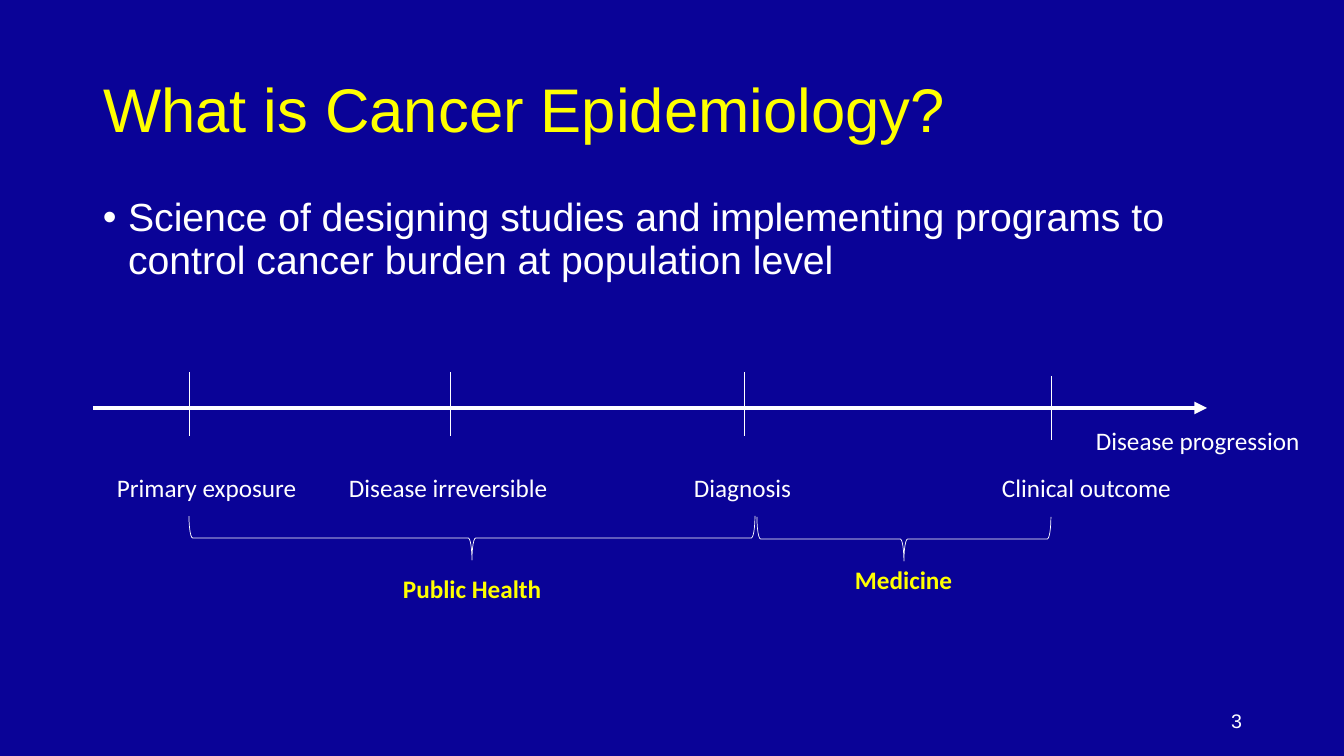
from lxml import etree
from pptx import Presentation
from pptx.dml.color import RGBColor
from pptx.enum.shapes import MSO_CONNECTOR, MSO_SHAPE
from pptx.enum.text import MSO_ANCHOR, MSO_AUTO_SIZE, PP_ALIGN
from pptx.oxml.ns import qn
from pptx.util import Pt

WIDTH, HEIGHT = 1344, 756
EMU_PER_PX = 12192000 / WIDTH
NAVY, YELLOW, WHITE = "0A0397", "FFFF00", "FFFFFF"

STAGES = [  # label, label left, label width, tick x, tick top
    ("Primary exposure", 107, 202, 189, 372),
    ("Disease irreversible", 339, 221, 450, 372),
    ("Diagnosis", 684, 119, 744, 372),
    ("Clinical outcome", 992, 192, 1051, 376),
]
FIELDS = [  # label, label left, top and width, brace left, top and width
    ("Public Health", 393, 568, 160, 189, 516, 566),
    ("Medicine", 845, 559, 118, 757, 517, 294),
]


def px(n):
    return round(n * EMU_PER_PX)


def color(value):
    return RGBColor.from_string(value)


def write(shape, text, size=18, font="Calibri", fill=WHITE, bold=False,
          align=PP_ALIGN.LEFT, anchor=MSO_ANCHOR.TOP, wrap=True, spacing=None):
    tf = shape.text_frame
    tf.word_wrap = wrap
    tf.auto_size = MSO_AUTO_SIZE.NONE if wrap else MSO_AUTO_SIZE.SHAPE_TO_FIT_TEXT
    tf.vertical_anchor = anchor
    p = tf.paragraphs[0]
    p.alignment = align
    p.line_spacing = spacing
    r = p.add_run()
    r.text = text
    r.font.size, r.font.name, r.font.bold = Pt(size), font, bold
    r.font.color.rgb = color(fill)
    return p


def add_text(s, box, text, **fmt):
    return write(s.shapes.add_textbox(*map(px, box)), text, **fmt)


def add_label(s, left, top, width, text, **fmt):
    add_text(s, (left, top, width, 40), text, wrap=False, **fmt)


def add_line(s, x1, y1, x2, y2, weight, arrow=False):
    line = s.shapes.add_connector(MSO_CONNECTOR.STRAIGHT, *map(px, (x1, y1, x2, y2)))
    line.line.color.rgb = color(WHITE)
    line.line.width = Pt(weight)
    if arrow:
        etree.SubElement(line.line._get_or_add_ln(), qn("a:tailEnd"), type="triangle")
    etree.SubElement(line._element.spPr, qn("a:effectLst"))


def add_brace(s, left, top, width, height):
    """Brace that fills the given box and points down."""
    x, y = left + (width - height) / 2, top + (height - width) / 2
    sp = s.shapes.add_shape(MSO_SHAPE.LEFT_BRACE, px(x), px(y), px(height), px(width))
    sp.rotation = 270
    sp.shadow.inherit = False
    sp.fill.background()
    sp.line.color.rgb = color(WHITE)
    sp.line.width = Pt(0.5)


def add_title(s, box, text):
    title = s.shapes.title
    title.left, title.top, title.width, title.height = map(px, box)
    write(title, text, size=44, font="Arial", fill=YELLOW,
          anchor=MSO_ANCHOR.MIDDLE, spacing=0.9)


def add_definition(s, box, text):
    p = add_text(s, box, text, size=28, font="Arial", spacing=0.9)
    p.space_before = Pt(10)
    pPr = p._p.get_or_add_pPr()
    pPr.set("marL", str(Pt(18)))
    pPr.set("indent", str(-Pt(18)))
    etree.SubElement(pPr, qn("a:buFont"), typeface="Arial")
    etree.SubElement(pPr, qn("a:buChar"), char="•")


def add_timeline(s, left, axis_y, width):
    add_line(s, left, axis_y, left + width, axis_y, 3, arrow=True)
    for text, label_left, label_width, tick_x, tick_top in STAGES:
        add_line(s, tick_x, tick_top, tick_x, tick_top + 64, 0.5)
        add_label(s, label_left, axis_y + 59, label_width, text)
    add_label(s, left + 993, axis_y + 12, 226, "Disease progression")


def add_fields():
    for text, left, top, width, *brace in FIELDS:
        yield (left, top, width, text), brace


def main():
    prs = Presentation()
    prs.slide_width, prs.slide_height = px(WIDTH), px(HEIGHT)
    s = prs.slides.add_slide(prs.slide_layouts.get_by_name("Title Only"))
    s.background.fill.solid()
    s.background.fill.fore_color.rgb = color(NAVY)

    add_title(s, (93, 40, 1159, 146), "What is Cancer Epidemiology?")
    add_definition(s, (93, 193, 1159, 102),
                   "Science of designing studies and implementing programs "
                   "to control cancer burden at population level")
    add_timeline(s, 93, 408, 1114)
    for label, brace in add_fields():
        add_brace(s, *brace, 44)
        add_label(s, *label, fill=YELLOW, bold=True)
    add_text(s, (950, 701, 302, 40), "3", size=14, font="Arial",
             align=PP_ALIGN.RIGHT, anchor=MSO_ANCHOR.MIDDLE)
    prs.save("out.pptx")


if __name__ == "__main__":
    main()
